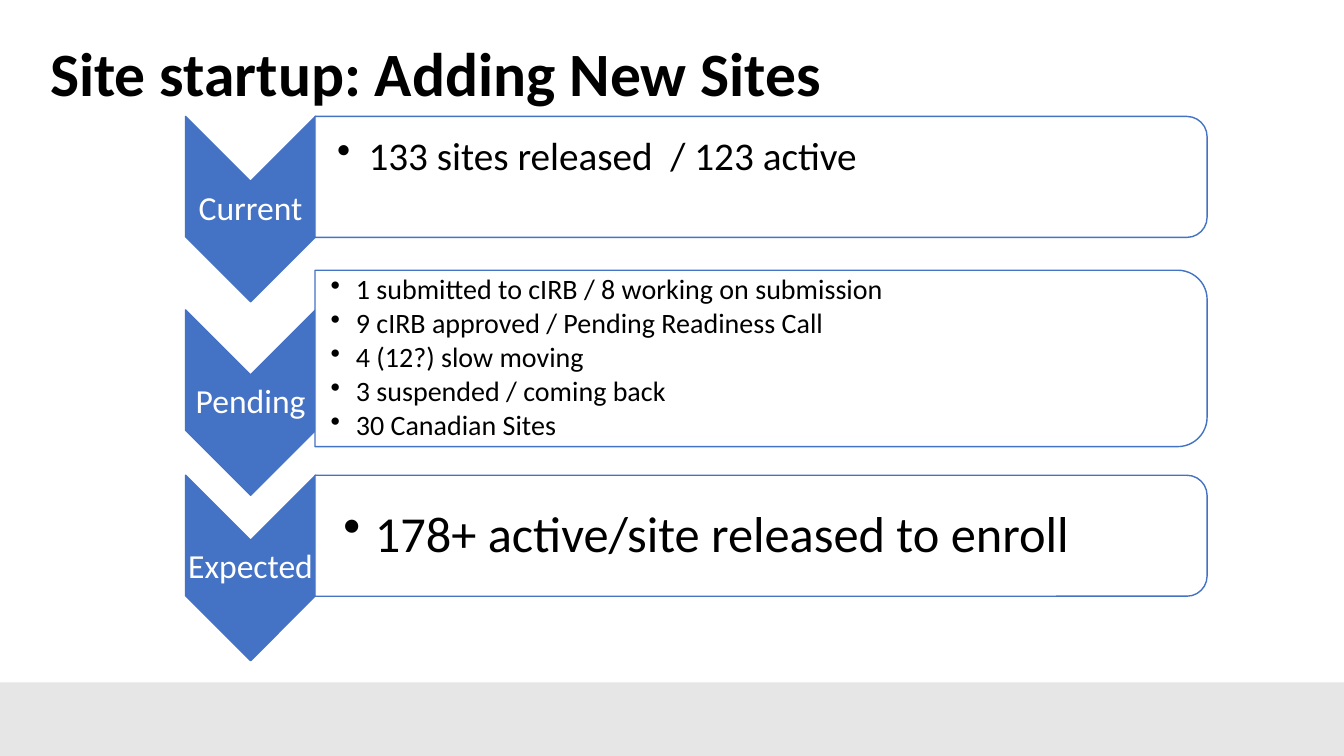
from dataclasses import dataclass

from lxml import etree
from pptx import Presentation
from pptx import util as u
from pptx.dml.color import RGBColor
from pptx.enum import shapes, text
from pptx.oxml.ns import qn


@dataclass(frozen=True)
class Theme:
    """Colours, font and type sizes of the slide."""
    font: str = "Calibri"
    ink: str = "000000"
    paper: str = "FFFFFF"
    accent: str = "4472C4"
    band: str = "E7E6E6"
    title_size: float = 44
    label_size: float = 24
    large_size: float = 36
    medium_size: float = 28
    small_size: float = 20


THEME = Theme()


@dataclass(frozen=True)
class Frame:
    """A rectangle in points, given by its centre and its size."""
    centre_x: float
    centre_y: float
    width: float
    height: float

    def lengths(self) -> list:
        """Return left, top, width and height as lengths."""
        left = self.centre_x - self.width / 2
        top = self.centre_y - self.height / 2
        return [u.Pt(value) for value in (left, top, self.width, self.height)]

    def turned(self) -> "Frame":
        """Return the frame that covers this one after a quarter turn."""
        return Frame(self.centre_x, self.centre_y, self.height, self.width)


@dataclass(frozen=True)
class Stage:
    """One chevron with its panel of bullets."""
    label: str
    bullets: tuple[str, ...]
    size: float
    chevron_y: float
    panel_y: float
    panel_height: float
    indent: float
    margin: float
    bottom_margin: float = 1.4


STAGES = (
    Stage("Current", ("133 sites released  / 123 active",), THEME.medium_size,
          149.4, 126.4, 86.4, 22.5, 15.7, 29),
    Stage("Pending", ("1 submitted to cIRB / 8 working on submission",
                      "9 cIRB approved / Pending Readiness Call",
                      "4 (12?) slow moving",
                      "3 suspended / coming back",
                      "30 Canadian Sites"), THEME.small_size,
          287.6, 256, 126, 18, 11.2),
    Stage("Expected", ("178+ active/site released to enroll",), THEME.large_size,
          405.7, 382.7, 86.4, 22.5, 20.2),
)
CHEVRON_X, CHEVRON_WIDTH, CHEVRON_HEIGHT, LABEL_HEIGHT = 179, 92.9, 132.5, 39.6
PANEL_LEFT, PANEL_WIDTH, CORNER_SHARE = 225, 637.2, 0.1


def add_block(page, kind, frame: Frame, fill: str, line: str | None = None, rotation: float = 0):
    """Draw a filled preset shape without a shadow."""
    block = page.shapes.add_shape(kind, *frame.lengths())
    block.rotation = rotation
    block.shadow.inherit = False
    block.fill.solid()
    block.fill.fore_color.rgb = RGBColor.from_string(fill)
    if line:
        block.line.color.rgb = RGBColor.from_string(line)
        block.line.width = u.Pt(1)
    else:
        block.line.fill.background()
    return block


def add_words(page, frame: Frame, lines: tuple[str, ...], size: float, colour: str,
              margins: tuple[float, float, float, float], align=text.PP_ALIGN.LEFT,
              bold: bool = False, indent: float = 0) -> None:
    """Write lines in a middle-anchored box, bulleted when an indent is given."""
    box = page.shapes.add_textbox(*frame.lengths())
    body = box.text_frame
    body.word_wrap = True
    body.vertical_anchor = text.MSO_ANCHOR.MIDDLE
    body.margin_left, body.margin_top, body.margin_right, body.margin_bottom = map(u.Pt, margins)
    body.text = "\n".join(lines)
    for para in body.paragraphs:
        para.alignment = align
        para.line_spacing = 0.9
        if indent:
            add_bullet(para, indent)
            para.space_after = u.Pt(2.7)
        for span in para.runs:
            span.font.name = THEME.font
            span.font.size = u.Pt(size)
            span.font.bold = bold
            span.font.color.rgb = RGBColor.from_string(colour)


def add_bullet(para, indent: float) -> None:
    """Give a paragraph a hanging round bullet."""
    para.level = 1
    properties = para._p.get_or_add_pPr()
    properties.set("marL", str(u.Pt(indent)))
    properties.set("indent", str(-u.Pt(indent)))
    etree.SubElement(properties, qn("a:buChar"), char="•")


def add_stage(page, stage: Stage) -> None:
    """Draw one chevron, its label, its panel and its bullets."""
    chevron = Frame(CHEVRON_X, stage.chevron_y, CHEVRON_WIDTH, CHEVRON_HEIGHT)
    add_block(page, shapes.MSO_SHAPE.CHEVRON, chevron.turned(), THEME.accent, THEME.accent, 90)
    label = Frame(CHEVRON_X, stage.chevron_y, CHEVRON_WIDTH, LABEL_HEIGHT)
    add_words(page, label, (stage.label,), THEME.label_size, THEME.paper,
              (1.4, 1.4, 1.4, 1.4), text.PP_ALIGN.CENTER)

    panel = Frame(PANEL_LEFT + PANEL_WIDTH / 2, stage.panel_y, PANEL_WIDTH, stage.panel_height)
    block = add_block(page, shapes.MSO_SHAPE.ROUND_2_SAME_RECTANGLE, panel.turned(),
                      THEME.paper, THEME.accent, 90)
    colour = block._element.spPr.find(qn("a:solidFill"))[0]
    etree.SubElement(colour, qn("a:alpha"), val="90000")

    corner = stage.panel_height * CORNER_SHARE
    width = PANEL_WIDTH - corner / 2
    content = Frame(PANEL_LEFT + width / 2, stage.panel_y, width, stage.panel_height - corner)
    add_words(page, content, stage.bullets, stage.size, THEME.ink,
              (stage.margin, 1.4, 1.4, stage.bottom_margin), indent=stage.indent)


def main() -> None:
    """Build and save the slide."""
    deck = Presentation()
    deck.slide_width, deck.slide_height = u.Pt(960), u.Pt(540)
    page = deck.slides.add_slide(deck.slide_layouts[6])
    add_block(page, shapes.MSO_SHAPE.RECTANGLE, Frame(480, 513.7, 960, 52.6), THEME.band)
    add_words(page, Frame(406.8, 54.4, 756, 104.4), ("Site startup: Adding New Sites",),
              THEME.title_size, THEME.ink, (7.2, 3.6, 7.2, 3.6), bold=True)
    for stage in STAGES:
        add_stage(page, stage)
    deck.save("out.pptx")


if __name__ == "__main__":
    main()
